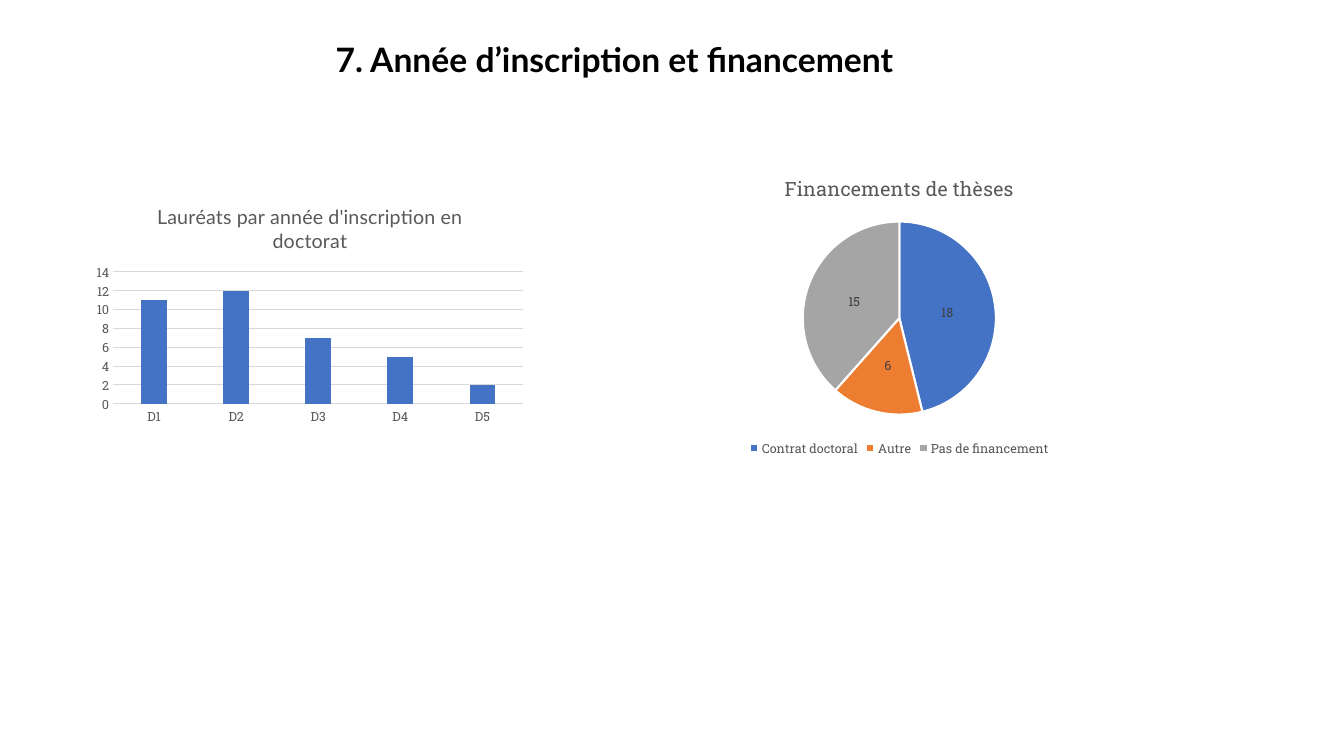
from dataclasses import dataclass

from pptx import Presentation
from pptx.chart.data import CategoryChartData
from pptx.dml.color import RGBColor
from pptx.enum.chart import (XL_CHART_TYPE, XL_LABEL_POSITION,
                             XL_LEGEND_POSITION, XL_TICK_MARK)
from pptx.enum.text import MSO_ANCHOR, PP_ALIGN
from pptx.util import Inches, Pt


@dataclass(frozen=True)
class Theme:
    sans: str = "Lato"
    slab: str = "Roboto Slab"
    black: str = "000000"
    label: str = "404040"
    muted: str = "595959"
    grid: str = "D9D9D9"
    white: str = "FFFFFF"
    palette: tuple = ("4472C4", "ED7D31", "A5A5A5")
    heading_size: float = 24
    chart_title_size: float = 14
    chart_size: float = 10
    small_size: float = 9


THEME = Theme()


def style_font(font, name, size, color, bold=False):
    formats = {"name": name, "size": Pt(size), "bold": bold}
    for attribute, value in formats.items():
        setattr(font, attribute, value)
    font.color.rgb = RGBColor.from_string(color)


def style_line(line, color, width=0.75):
    line.color.rgb = RGBColor.from_string(color)
    line.width = Pt(width)


def fill_solid(fill, color):
    fill.solid()
    fill.fore_color.rgb = RGBColor.from_string(color)


def add_heading(slide, text, box):
    heading = slide.shapes.add_textbox(*map(Inches, box)).text_frame
    heading.word_wrap = True
    heading.vertical_anchor = MSO_ANCHOR.TOP
    line = heading.paragraphs[0]
    line.alignment = PP_ALIGN.CENTER
    run = line.add_run()
    run.text = text
    style_font(run.font, THEME.sans, THEME.heading_size, THEME.black, bold=True)


def add_titled_chart(slide, kind, title, title_font, counts, box):
    data = CategoryChartData()
    data.categories = list(counts)
    data.add_series("Series 1", list(counts.values()))
    chart = slide.shapes.add_chart(kind, *map(Inches, box), data).chart
    style_font(chart.font, THEME.slab, THEME.chart_size, THEME.black)
    chart.has_legend = False
    chart.has_title = True
    chart.chart_title.include_in_layout = False
    run = chart.chart_title.text_frame.paragraphs[0].add_run()
    run.text = title
    style_font(run.font, title_font, THEME.chart_title_size, THEME.muted)
    chart.plots[0].vary_by_categories = kind == XL_CHART_TYPE.PIE
    return chart


def format_axis(axis):
    formats = {"major_tick_mark": XL_TICK_MARK.NONE,
               "minor_tick_mark": XL_TICK_MARK.NONE}
    for attribute, value in formats.items():
        setattr(axis, attribute, value)
    style_font(axis.tick_labels.font, THEME.slab, THEME.small_size, THEME.muted)


def format_columns(chart):
    years, laureates = chart.category_axis, chart.value_axis
    for axis in (years, laureates):
        format_axis(axis)
    style_line(years.format.line, THEME.grid)
    laureates.format.line.fill.background()
    laureates.has_major_gridlines = True
    style_line(laureates.major_gridlines.format.line, THEME.grid)
    columns = chart.plots[0]
    for attribute, value in {"gap_width": 219, "overlap": -27}.items():
        setattr(columns, attribute, value)
    fill_solid(columns.series[0].format.fill, THEME.palette[0])


def format_pie(chart):
    funding = chart.plots[0].series[0]
    for index, color in enumerate(THEME.palette):
        slice_format = funding.points[index].format
        fill_solid(slice_format.fill, color)
        style_line(slice_format.line, THEME.white, 1.5)
    # Counts inside the slices
    labels = funding.data_labels
    label_formats = {"show_value": True, "show_percentage": False,
                     "position": XL_LABEL_POSITION.CENTER}
    for attribute, value in label_formats.items():
        setattr(labels, attribute, value)
    style_font(labels.font, THEME.slab, THEME.small_size, THEME.label)
    # Legend under the pie
    chart.has_legend = True
    legend_formats = {"position": XL_LEGEND_POSITION.BOTTOM,
                      "include_in_layout": False}
    for attribute, value in legend_formats.items():
        setattr(chart.legend, attribute, value)
    style_font(chart.legend.font, THEME.slab, THEME.small_size, THEME.muted)


def main():
    deck = Presentation()
    deck.slide_width, deck.slide_height = Inches(13.33), Inches(7.5)
    slide = deck.slides.add_slide(deck.slide_layouts[6])

    # Laureates by year of enrolment
    format_columns(add_titled_chart(
        slide, XL_CHART_TYPE.COLUMN_CLUSTERED,
        "Lauréats par année d'inscription en doctorat", THEME.sans,
        {"D1": 11, "D2": 12, "D3": 7, "D4": 5, "D5": 2},
        (0.87, 1.87, 4.41, 2.39)))

    # Thesis funding
    format_pie(add_titled_chart(
        slide, XL_CHART_TYPE.PIE, "Financements de thèses", THEME.slab,
        {"Contrat doctoral": 18, "Autre": 6, "Pas de financement": 15},
        (6.42, 1.57, 5, 3)))

    # Slide heading
    add_heading(slide, "7. Année d’inscription et financement",
                (2.33, 0.34, 7.53, 0.5))

    deck.save("out.pptx")


if __name__ == "__main__":
    main()
